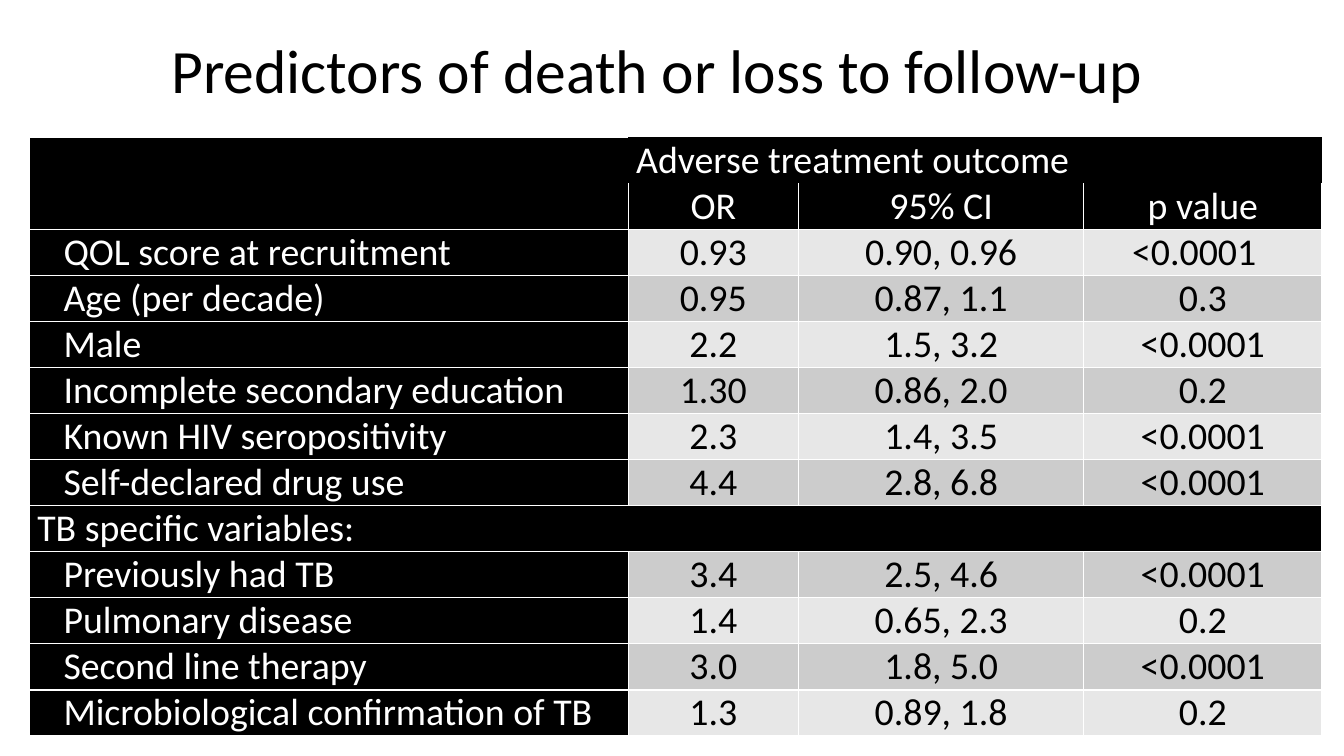
import pptx
import pptx.dml.color
import pptx.enum.text
import pptx.oxml
import pptx.oxml.ns
import pptx.util

In = pptx.util.Inches
Pt = pptx.util.Pt
ALIGN = pptx.enum.text.PP_ALIGN
ANCHOR = pptx.enum.text.MSO_ANCHOR

FONT = "Calibri"
COLORS = {"black": "000000", "white": "FFFFFF", "light": "E7E7E7", "mid": "CCCCCC"}
COLUMNS = [5.94, 1.69, 2.83, 2.36]
ROW_HEIGHT = 0.45
PAD, INDENT = 0.08, 0.26
HEADINGS = ["OR", "95% CI", "p value"]
SECTION = "TB specific variables:"
PREDICTORS = [
    ("QOL score at recruitment", "0.93", "0.90, 0.96", "<0.0001"),
    ("Age (per decade)", "0.95", "0.87, 1.1", "0.3"),
    ("Male", "2.2", "1.5, 3.2", "<0.0001"),
    ("Incomplete secondary education", "1.30", "0.86, 2.0", "0.2"),
    ("Known HIV seropositivity", "2.3", "1.4, 3.5", "<0.0001"),
    ("Self-declared drug use", "4.4", "2.8, 6.8", "<0.0001"),
    (SECTION,),
    ("Previously had TB", "3.4", "2.5, 4.6", "<0.0001"),
    ("Pulmonary disease", "1.4", "0.65, 2.3", "0.2"),
    ("Second line therapy", "3.0", "1.8, 5.0", "<0.0001"),
    ("Microbiological confirmation of TB", "1.3", "0.89, 1.8", "0.2"),
]


def rgb(name):
    return pptx.dml.color.RGBColor.from_string(COLORS[name])


def add_run(p, text, size, color):
    r = p.add_run()
    r.text = text
    r.font.name, r.font.size = FONT, Pt(size)
    r.font.color.rgb = rgb(color)


def set_borders(cell, white_sides):
    """Draw thin white lines on the given sides and none on the others."""
    tcPr = cell._tc.get_or_add_tcPr()
    for side in "LRTB":
        paint = "<a:noFill/>"
        if side in white_sides:
            paint = f'<a:solidFill><a:srgbClr val="{COLORS["white"]}"/></a:solidFill>'
        tcPr.append(pptx.oxml.parse_xml(
            f'<a:ln{side} {pptx.oxml.ns.nsdecls("a")} w="{Pt(1)}">{paint}</a:ln{side}>'))


def style_cell(cell, fill, borders="LRTB"):
    set_borders(cell, borders)
    cell.fill.solid()
    cell.fill.fore_color.rgb = rgb(fill)
    cell.margin_left = cell.margin_right = In(PAD)
    cell.margin_top = cell.margin_bottom = 0


def write_cell(cell, text, color, align=ALIGN.CENTER, anchor=ANCHOR.MIDDLE):
    cell.vertical_anchor = anchor
    p = cell.text_frame.paragraphs[0]
    p.alignment = align
    add_run(p, text, 27, color)


def add_title(s, text):
    sp = s.shapes.title
    sp.left, sp.top, sp.width, sp.height = In(1.6), 0, In(11.5), In(1.45)
    tf = sp.text_frame
    tf.vertical_anchor = ANCHOR.MIDDLE
    p = tf.paragraphs[0]
    p.alignment, p.line_spacing = ALIGN.LEFT, 0.9
    add_run(p, text, 44, "black")


def fill_header(table):
    for col in range(len(COLUMNS)):
        style_cell(table.cell(0, col), "black", "" if col else "LT")
        style_cell(table.cell(1, col), "black", "LRB")
    table.cell(0, 0).merge(table.cell(1, 0))
    table.cell(0, 1).merge(table.cell(0, 3))
    write_cell(table.cell(0, 1), "Adverse treatment outcome", "white",
               ALIGN.LEFT, ANCHOR.BOTTOM)
    for col, heading in enumerate(HEADINGS, 1):
        write_cell(table.cell(1, col), heading, "white", anchor=ANCHOR.BOTTOM)


def fill_predictor(table, row, values):
    is_section = len(values) == 1
    band = "mid" if row % 2 else "light"
    for col in range(len(COLUMNS)):
        style_cell(table.cell(row, col), "black" if is_section or col == 0 else band)
    label = table.cell(row, 0)
    if is_section:
        label.merge(table.cell(row, len(COLUMNS) - 1))
    else:
        label.margin_left = In(PAD + INDENT)
    write_cell(label, values[0], "white", ALIGN.LEFT)
    for col, value in enumerate(values[1:], 1):
        write_cell(table.cell(row, col), value, "black")


def add_predictor_table(s):
    rows = len(PREDICTORS) + 2
    frame = s.shapes.add_table(rows, len(COLUMNS), In(0.29), In(1.36),
                               In(sum(COLUMNS)), In(rows * ROW_HEIGHT))
    table = frame.table
    table.first_row = table.horz_banding = False
    for column, width in zip(table.columns, COLUMNS):
        column.width = In(width)
    fill_header(table)
    for row, values in enumerate(PREDICTORS, 2):
        fill_predictor(table, row, values)
    # The first p value sits slightly left of centre
    table.cell(2, 3).margin_right = In(PAD + 0.17)


def main():
    prs = pptx.Presentation()
    prs.slide_width, prs.slide_height = In(13.33), In(7.5)
    s = prs.slides.add_slide(prs.slide_layouts[5])
    add_title(s, "Predictors of death or loss to follow-up")
    add_predictor_table(s)
    prs.save("out.pptx")


if __name__ == "__main__":
    main()
